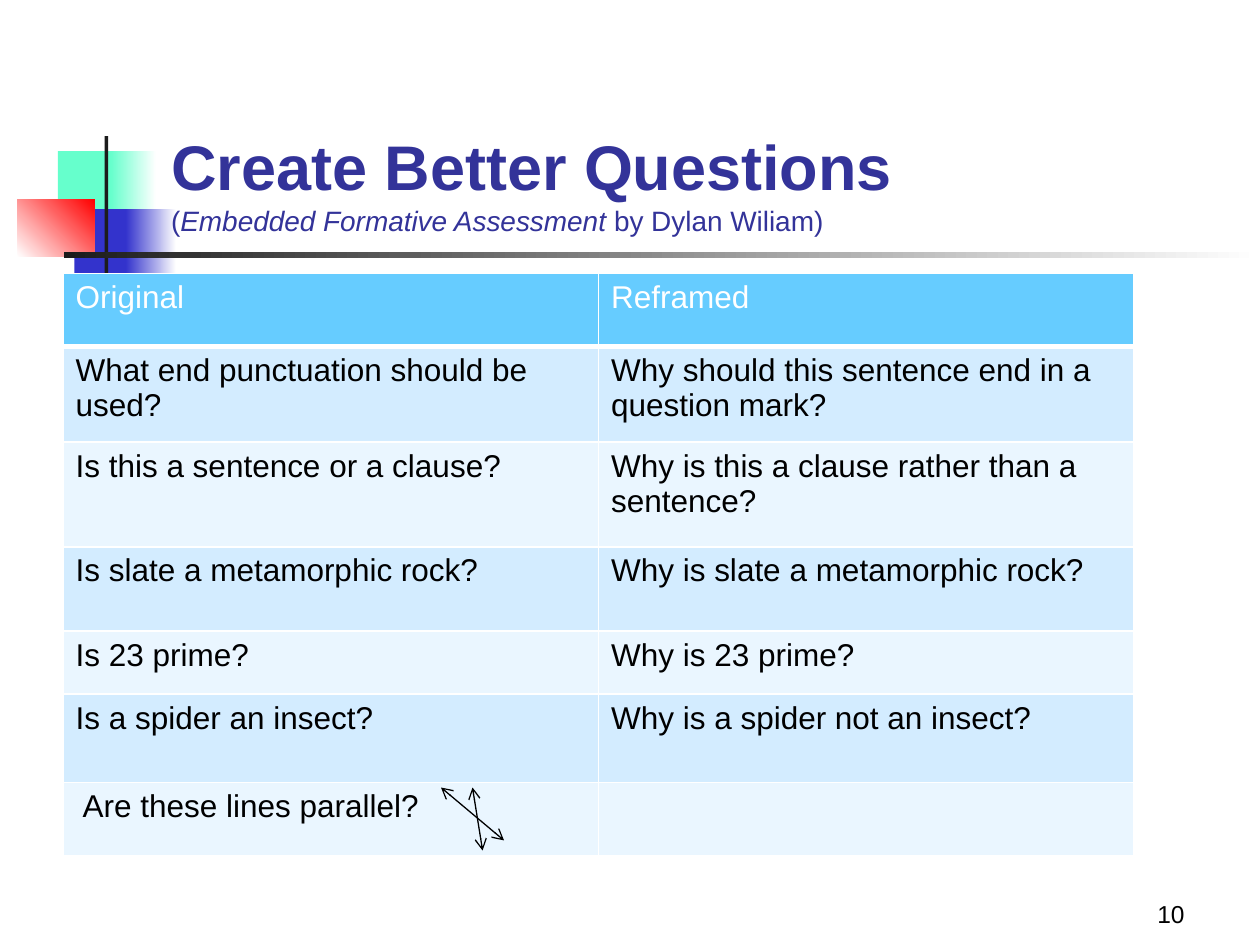
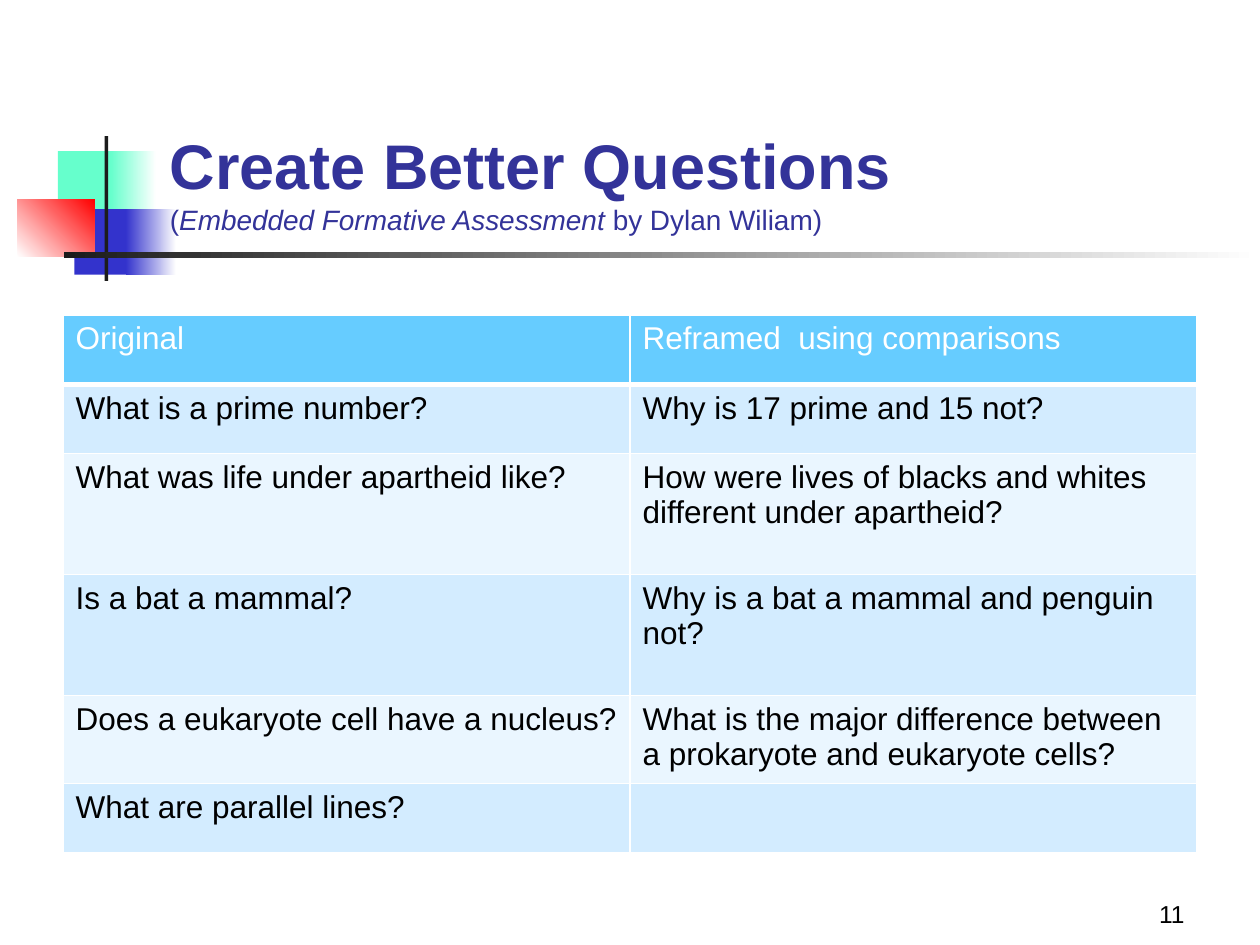
from lxml.etree import SubElement
from pptx import Presentation
from pptx.dml.color import RGBColor
from pptx.enum.shapes import MSO_CONNECTOR, MSO_SHAPE
from pptx.enum.text import MSO_ANCHOR, PP_ALIGN
from pptx.oxml.ns import qn
from pptx.util import Inches, Pt

FONT = "Arial"
WHITE, BLACK, DARK = "FFFFFF", "000000", "1C1C1C"
MINT, BLUE, RED, NAVY = "66FFCC", "3333CC", "FF0000", "333399"
HEAD, BANDS = "66CCFF", ("D3ECFF", "EAF6FF")


def tint(code):
    return RGBColor.from_string(code)


def write(para, text, size=18, color=BLACK, bold=False, italic=False):
    run = para.add_run()
    run.text = text
    font = run.font
    font.name, font.size = FONT, Pt(size)
    font.bold, font.italic = bold, italic
    font.color.rgb = tint(color)


def edge(cell, side, width):
    line = SubElement(cell._tc.get_or_add_tcPr(), qn(f"a:ln{side}"), w=str(Pt(width)))
    fill = SubElement(line, qn("a:solidFill"))
    SubElement(fill, qn("a:srgbClr"), val=WHITE)


class Deck:
    def __init__(self):
        self.prs = Presentation()
        self.prs.slide_width, self.prs.slide_height = Inches(10), Inches(7.5)
        self.slide = None

    def rect(self, box, color, end=None, angle=0):
        """Plain rectangle, or one that fades from color to end."""
        shape = self.slide.shapes.add_shape(MSO_SHAPE.RECTANGLE, *map(Inches, box))
        shape.shadow.inherit = False
        shape.line.fill.background()
        if end is None:
            shape.fill.solid()
            shape.fill.fore_color.rgb = tint(color)
            return
        shape.fill.gradient()
        shape.fill.gradient_angle = angle
        for stop, code in zip(shape.fill.gradient_stops, (color, end)):
            stop.color.rgb = tint(code)

    def label(self, box, align=PP_ALIGN.LEFT):
        """Text box anchored at its bottom; returns its paragraph."""
        frame = self.slide.shapes.add_textbox(*map(Inches, box)).text_frame
        frame.word_wrap = True
        frame.vertical_anchor = MSO_ANCHOR.BOTTOM
        para = frame.paragraphs[0]
        para.alignment = align
        return para

    def motif(self):
        # Coloured squares
        self.rect((0.46, 1.2, 0.48, 0.52), MINT)
        self.rect((0.88, 1.2, 0.36, 0.52), MINT, WHITE)
        self.rect((0.59, 1.66, 0.46, 0.52), BLUE)
        self.rect((1, 1.66, 0.4, 0.52), BLUE, WHITE)
        self.rect((0.14, 1.58, 0.61, 0.46), WHITE, RED, angle=45)
        # Crossing bars
        self.rect((0.83, 1.08, 0.03, 1.15), DARK)
        self.rect((0.51, 2, 9.49, 0.05), DARK, WHITE)

    def page(self, number, title_box):
        self.slide = self.prs.slides.add_slide(self.prs.slide_layouts[6])
        self.motif()
        # Title and its source
        para = self.label(title_box)
        write(para, "Create Better Questions ", size=36, color=NAVY, bold=True)
        para.add_line_break()
        write(para, "(", size=16, color=NAVY)
        write(para, "Embedded Formative Assessment ", size=16, color=NAVY, italic=True)
        write(para, "by Dylan Wiliam)", size=16, color=NAVY)
        # Page number
        write(self.label((7.42, 6.92, 2.08, 0.5), PP_ALIGN.RIGHT), str(number), size=14)

    def table(self, top, width, heights, rows):
        box = map(Inches, (0.5, top, width, sum(heights)))
        grid = self.slide.shapes.add_table(len(rows), 2, *box).table
        for col in grid.columns:
            col.width = Inches(width / 2)
        for r, (height, texts) in enumerate(zip(heights, rows)):
            grid.rows[r].height = Inches(height)
            for c, text in enumerate(texts):
                cell = grid.cell(r, c)
                for side in "LRTB":
                    edge(cell, side, 3 if r == 0 and side == "B" else 1)
                cell.fill.solid()
                cell.fill.fore_color.rgb = tint(BANDS[(r - 1) % 2] if r else HEAD)
                if text:
                    write(cell.text_frame.paragraphs[0], text, color=BLACK if r else WHITE)

    def arrow(self, *ends):
        """Thin line with an open arrowhead at both ends."""
        line = self.slide.shapes.add_connector(MSO_CONNECTOR.STRAIGHT, *map(Inches, ends))
        line.line.color.rgb = tint(BLACK)
        line.line.width = Pt(0.75)
        for tag in ("a:headEnd", "a:tailEnd"):
            SubElement(line.line._get_or_add_ln(), qn(tag), type="arrow")
        SubElement(line._element.spPr, qn("a:effectLst"))


def main():
    deck = Deck()

    # Yes-or-no questions reframed as "why"
    deck.page(10, (1.26, 0.25, 8.52, 1.68))
    deck.table(2.17, 8.5, (0.58, 0.76, 0.83, 0.67, 0.5, 0.7, 0.58), [
        ("Original", "Reframed"),
        ("What end punctuation should be used?",
         "Why should this sentence end in a question mark?"),
        ("Is this a sentence or a clause?", "Why is this a clause rather than a sentence?"),
        ("Is slate a metamorphic rock?", "Why is slate a metamorphic rock?"),
        ("Is 23 prime?", "Why is 23 prime?"),
        ("Is a spider an insect?", "Why is a spider not an insect?"),
        (" Are these lines parallel?", ""),
    ])
    deck.arrow(3.5, 6.25, 4, 6.67)
    deck.arrow(3.75, 6.25, 3.83, 6.75)

    # Questions reframed as comparisons
    deck.page(11, (1.25, 0.67, 8.52, 1.25))
    deck.table(2.5, 9, (0.55, 0.55, 0.96, 0.96, 0.7, 0.55), [
        ("Original", "Reframed  using comparisons"),
        ("What is a prime number?", "Why is 17 prime and 15 not?"),
        ("What was life under apartheid like?",
         "How were lives of blacks and whites different under apartheid?"),
        ("Is a bat a mammal?", "Why is a bat a mammal and penguin not?"),
        ("Does a eukaryote cell have a nucleus?",
         "What is the major difference between a prokaryote and eukaryote cells?"),
        ("What are parallel lines?", ""),
    ])

    deck.prs.save("out.pptx")


if __name__ == "__main__":
    main()
